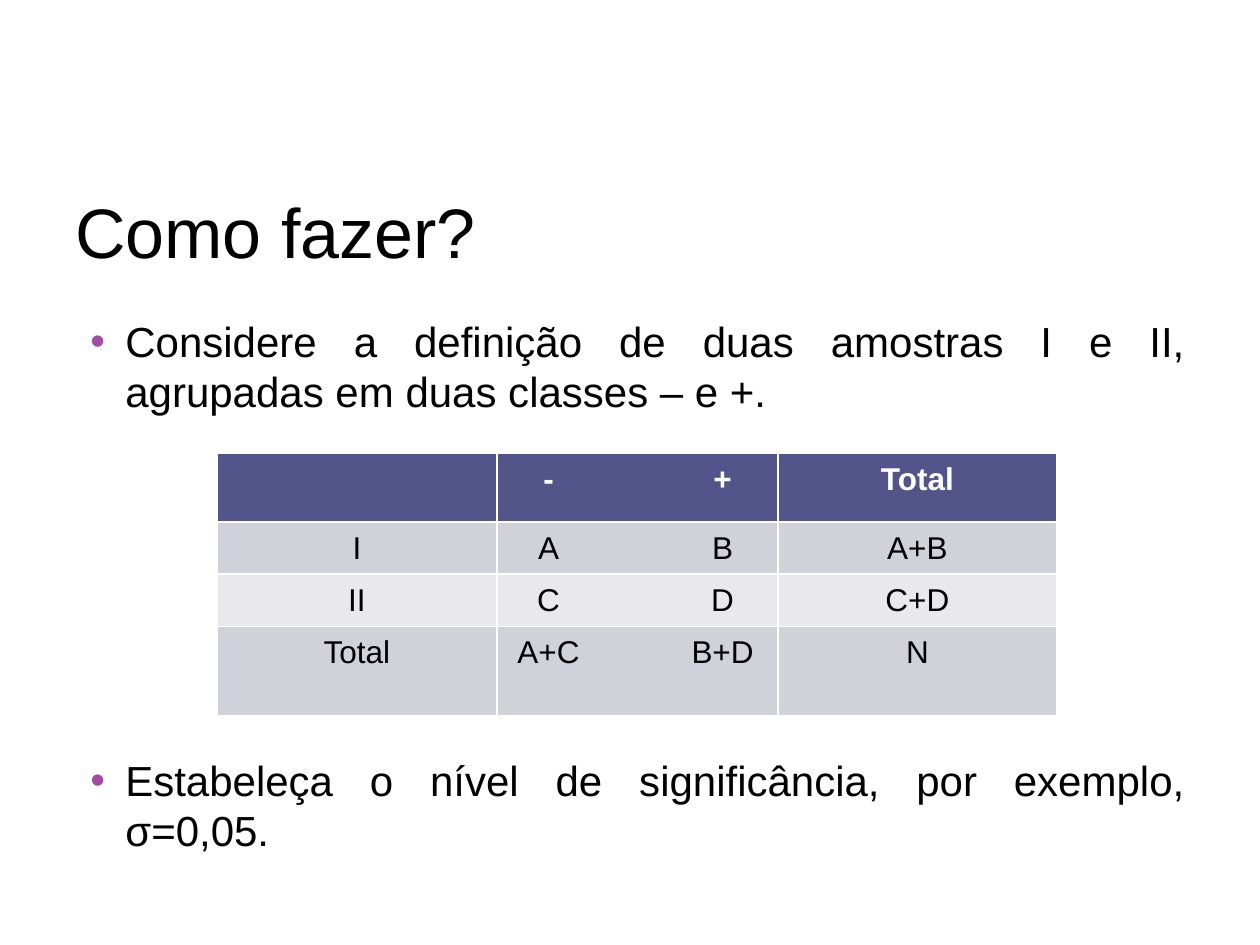
import pptx
import pptx.util
import pptx.dml.color
import pptx.enum.text
import pptx.oxml.ns
import lxml.etree

TITLE = "Como fazer?"
BULLETS = [
    ("Considere a definição de duas amostras I e II, agrupadas em duas classes – e +.", 3),
    ("Estabeleça o nível de significância, por exemplo, σ=0,05.", 194),
]
ROWS = [
    ("", "\t-\t+", "Total"),
    ("I", "\tA\tB", "A+B"),
    ("II", "\tC\tD", "C+D"),
    ("Total", "\tA+C\tB+D", "N"),
]
COL_WIDTHS = [280, 281, 279]
ROW_HEIGHTS = [69, 51, 51, 89]
CLASS_TABS = [39, 213]
COLORS = {
    "text": "000000", "head_text": "FFFFFF", "bullet": "A04DA3",
    "head": "53548A", "odd": "D1D1DA", "even": "E9E9ED",
}
ALIGN = pptx.enum.text.PP_ALIGN


def px(n):
    return pptx.util.Emu(round(n * 914400 / 126))


def rgb(name):
    return pptx.dml.color.RGBColor.from_string(COLORS[name])


def sub(parent, tag, **attrs):
    el = lxml.etree.SubElement(parent, pptx.oxml.ns.qn(tag))
    for key, value in attrs.items():
        el.set(key, str(value))
    return el


def set_font(p, size, color="text", bold=False):
    p.font.name = "Arial"
    p.font.size = pptx.util.Pt(size)
    p.font.bold = bold
    p.font.color.rgb = rgb(color)


def add_text(s, x, y, w, h):
    tf = s.shapes.add_textbox(px(x), px(y), px(w), px(h)).text_frame
    tf.word_wrap = True
    return tf


def add_bullets(tf):
    for i, (text, before) in enumerate(BULLETS):
        p = tf.add_paragraph() if i else tf.paragraphs[0]
        p.text = text
        p.alignment = ALIGN.JUSTIFY
        p.line_spacing = pptx.util.Pt(28.5)
        p.space_before = pptx.util.Pt(before)
        pPr = p._p.get_or_add_pPr()
        pPr.set("marL", str(px(50)))
        pPr.set("indent", str(px(-35)))
        sub(sub(pPr, "a:buClr"), "a:srgbClr", val=COLORS["bullet"])
        sub(pPr, "a:buFont", typeface="Arial")
        sub(pPr, "a:buChar", char="•")
        set_font(p, 24)


def add_class_table(s):
    table = s.shapes.add_table(len(ROWS), len(COL_WIDTHS), px(217), px(453),
                               px(sum(COL_WIDTHS)), px(sum(ROW_HEIGHTS))).table
    for col, width in zip(table.columns, COL_WIDTHS):
        col.width = px(width)
    for r, (values, height) in enumerate(zip(ROWS, ROW_HEIGHTS)):
        table.rows[r].height = px(height)
        fill = "head" if r == 0 else "odd" if r % 2 else "even"
        for c, text in enumerate(values):
            cell = table.cell(r, c)
            cell.fill.solid()
            cell.fill.fore_color.rgb = rgb(fill)
            cell.margin_top = px(13)
            p = cell.text_frame.paragraphs[0]
            p.text = text
            p.line_spacing = 0.87
            p.alignment = ALIGN.CENTER
            if "\t" in text:
                p.alignment = ALIGN.LEFT
                tabs = sub(p._p.get_or_add_pPr(), "a:tabLst")
                for pos in CLASS_TABS:
                    sub(tabs, "a:tab", pos=px(pos), algn="ctr")
            set_font(p, 18, "text" if r else "head_text", r == 0)


def main():
    prs = pptx.Presentation()
    prs.slide_width, prs.slide_height = px(1260), px(945)
    s = prs.slides.add_slide(prs.slide_layouts[6])
    tf = add_text(s, 63, 157, 1134, 148)
    tf.vertical_anchor = pptx.enum.text.MSO_ANCHOR.MIDDLE
    tf.text = TITLE
    set_font(tf.paragraphs[0], 40)
    add_bullets(add_text(s, 63, 310, 1134, 596))
    add_class_table(s)
    prs.save("out.pptx")


if __name__ == "__main__":
    main()
